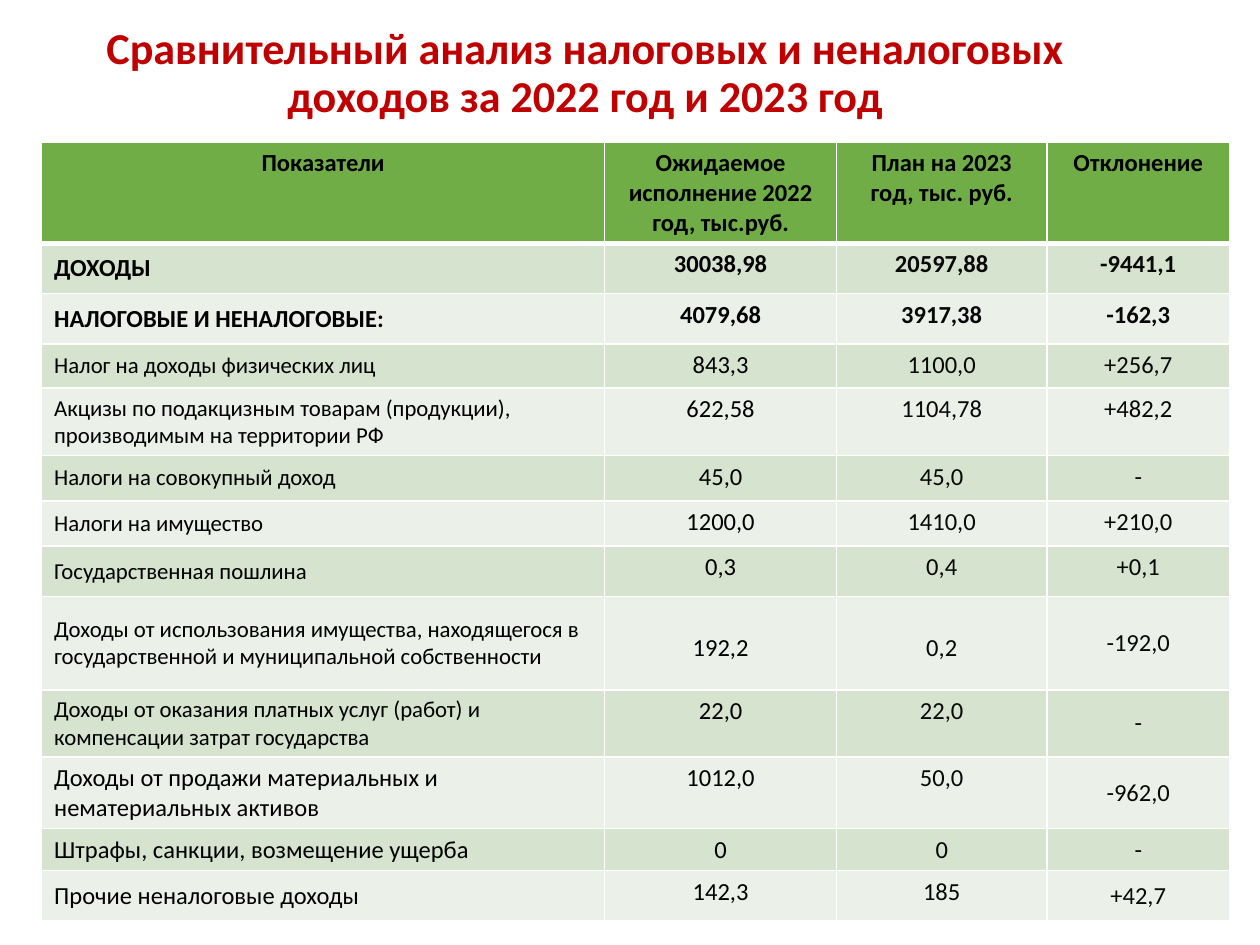
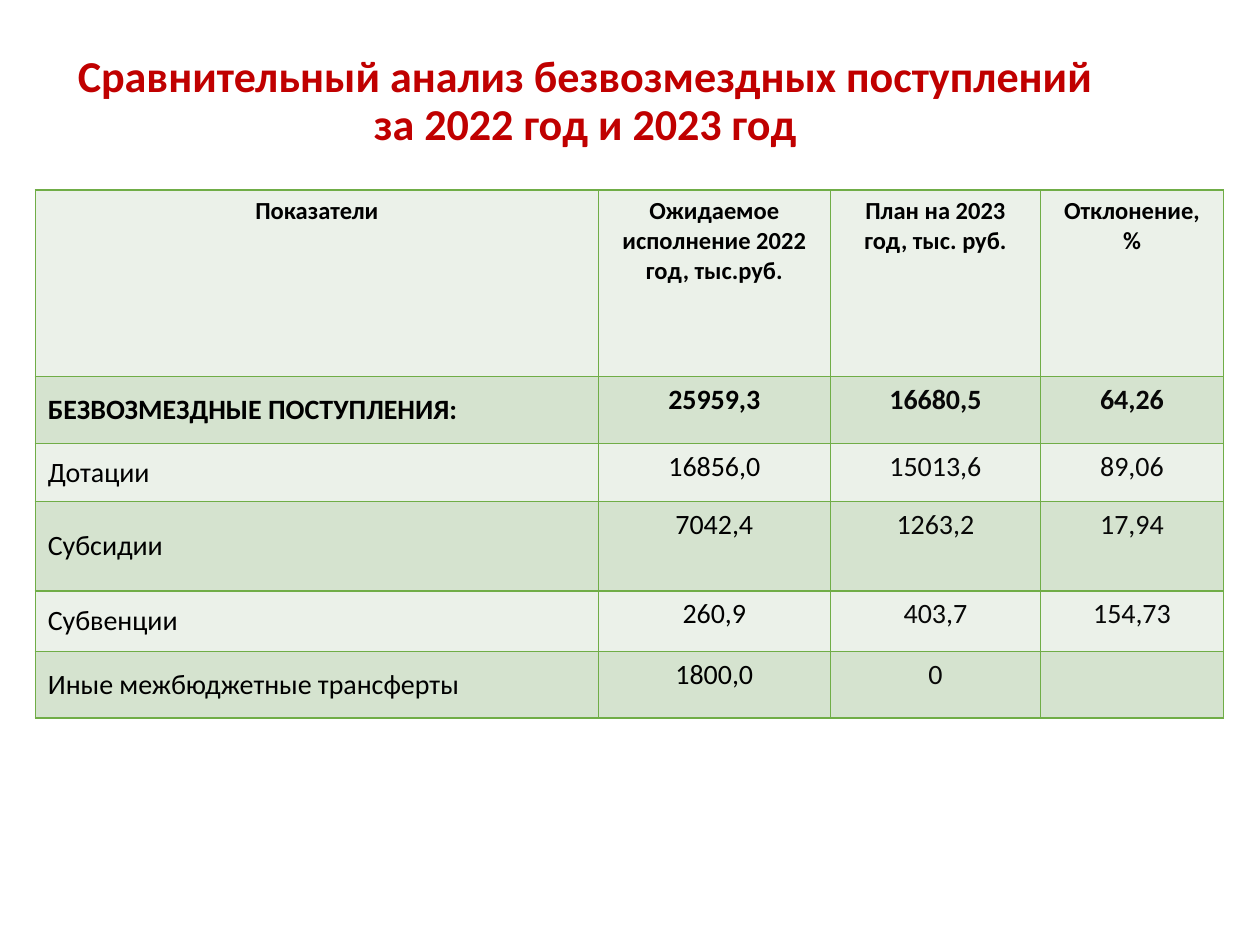
"""Builds two slides of tables comparing budget income for 2022 and 2023."""
from lxml import etree
from pptx import Presentation
from pptx.dml.color import RGBColor
from pptx.enum.text import MSO_ANCHOR, PP_ALIGN
from pptx.oxml.ns import qn
from pptx.util import Pt

SCALE = 9144
FONT = "Calibri"
RED = RGBColor(0xC0, 0x00, 0x00)
BLACK = RGBColor(0x00, 0x00, 0x00)
SOFT_BLACK = RGBColor(0x08, 0x08, 0x08)
WHITE = RGBColor(0xFF, 0xFF, 0xFF)
GREEN = RGBColor(0x70, 0xAD, 0x47)
BANDS = RGBColor(0xEB, 0xF1, 0xE9), RGBColor(0xD5, 0xE3, 0xCF)
LEFT, CENTER = PP_ALIGN.LEFT, PP_ALIGN.CENTER
TOP, MIDDLE = MSO_ANCHOR.TOP, MSO_ANCHOR.MIDDLE

COLUMNS = 447, 184, 167, 145
HEADS = "Показатели", "Ожидаемое исполнение 2022 год, тыс.руб.", "План на 2023 год, тыс. руб."

TAX_ROWS = [
    (78, 14, *HEADS, "Отклонение"),
    (40, 14, "ДОХОДЫ", "30038,98", "20597,88", "-9441,1"),
    (40, 14, "НАЛОГОВЫЕ И НЕНАЛОГОВЫЕ:", "4079,68", "3917,38", "-162,3"),
    (35, 13, "Налог на доходы физических лиц", "843,3", "1100,0", "+256,7"),
    (53, 13, "Акцизы по подакцизным товарам (продукции), производимым на территории РФ",
     "622,58", "1104,78", "+482,2"),
    (36, 13, "Налоги на совокупный доход", "45,0", "45,0", "-"),
    (36, 13, "Налоги на имущество", "1200,0", "1410,0", "+210,0"),
    (40, 13, "Государственная пошлина", "0,3", "0,4", "+0,1"),
    (74, 13, "Доходы от использования имущества, находящегося в государственной "
     "и муниципальной собственности", "192,2", "0,2", "-192,0"),
    (53, 13, "Доходы от оказания платных услуг (работ) и компенсации затрат государства",
     "22,0", "22,0", "-"),
    (56, 14, "Доходы от продажи материальных и нематериальных активов",
     "1012,0", "50,0", "-962,0"),
    (30, 14, "Штрафы, санкции, возмещение ущерба", "0", "0", "-"),
    (40, 14, "Прочие неналоговые доходы", "142,3", "185", "+42,7"),
]
TRANSFER_ROWS = [
    (148, 14, *HEADS, "Отклонение, %"),
    (53, 16, "БЕЗВОЗМЕЗДНЫЕ ПОСТУПЛЕНИЯ:", "25959,3", "16680,5", "64,26"),
    (46, 16, "Дотации", "16856,0", "15013,6", "89,06"),
    (71, 16, "Субсидии", "7042,4", "1263,2", "17,94"),
    (48, 16, "Субвенции", "260,9", "403,7", "154,73"),
    (53, 16, "Иные межбюджетные трансферты", "1800,0", "0", ""),
]


def px(n):
    """Turn px into EMU."""
    return n * SCALE


class Deck:
    """Holds the style and the current slide."""

    def __init__(self):
        """Start an empty presentation."""
        self.prs = Presentation()
        self.prs.slide_width, self.prs.slide_height = px(1000), px(750)

    def slide(self):
        """Add a blank slide."""
        self.s = self.prs.slides.add_slide(self.prs.slide_layouts[6])

    def text(self, p, text, align, size, color, bold):
        """Add one formatted run."""
        p.alignment = align
        r = p.add_run()
        r.text = text
        for name, value in {"name": FONT, "size": Pt(size), "bold": bold}.items():
            setattr(r.font, name, value)
        r.font.color.rgb = color

    def title(self, text, top, height):
        """Add the red heading."""
        tf = self.s.shapes.add_textbox(px(50), px(top), px(829), px(height)).text_frame
        tf.word_wrap, tf.vertical_anchor = True, MIDDLE
        p = tf.paragraphs[0]
        p.line_spacing = 0.9
        self.text(p, text, CENTER, 25.2, RED, True)

    def border(self, cell, color, widths):
        """Draw the cell borders from a dict of side and width."""
        tc_pr = cell._tc.get_or_add_tcPr()
        for side, width in widths.items():
            ln = etree.SubElement(tc_pr, qn(f"a:ln{side}"), w=str(Pt(width)))
            fill = etree.SubElement(ln, qn("a:solidFill"))
            etree.SubElement(fill, qn("a:srgbClr"), val=str(color))

    def table(self, rows, left, top, line, value_size, head_fill, head_rule=1,
              middle_from=99, lowered_row=None):
        """Add a banded table with a heading row."""
        height = sum(row[0] for row in rows)
        tbl = self.s.shapes.add_table(len(rows), len(COLUMNS), px(left), px(top),
                                      px(sum(COLUMNS)), px(height)).table
        tbl.first_row = tbl.horz_banding = False
        for column, width in zip(tbl.columns, COLUMNS):
            column.width = px(width)
        for i, (row_height, label_size, *texts) in enumerate(rows):
            tbl.rows[i].height = px(row_height)
            head = i == 0
            bold = head or texts[0].isupper()
            for j, text in enumerate(texts):
                cell = tbl.cell(i, j)
                label = j == 0 and not head
                self.border(cell, line, {"L": 1, "R": 1, "T": head_rule if i == 1 else 1,
                                         "B": head_rule if head else 1})
                cell.fill.solid()
                cell.fill.fore_color.rgb = head_fill if head else BANDS[i % 2]
                centred = label or (j == 3 and i >= middle_from)
                cell.vertical_anchor = MIDDLE if centred else TOP
                if i == lowered_row and not centred:
                    cell.margin_top = px(29)
                if text:
                    self.text(cell.text_frame.paragraphs[0], text, LEFT if label else CENTER,
                              label_size if label or head else value_size,
                              BLACK if head or j < 2 else SOFT_BLACK, bold)


def main():
    """Build and save both slides."""
    deck = Deck()
    deck.slide()
    deck.title("Сравнительный анализ налоговых и неналоговых доходов за 2022 год и 2023 год", 21, 76)
    deck.table(TAX_ROWS, 33, 113, WHITE, 14, GREEN, head_rule=3, middle_from=8, lowered_row=8)
    deck.slide()
    deck.title("Сравнительный анализ безвозмездных поступлений за 2022 год и 2023 год", 42, 78)
    deck.table(TRANSFER_ROWS, 28, 151, GREEN, 16, BANDS[0])
    deck.prs.save("out.pptx")


if __name__ == "__main__":
    main()
